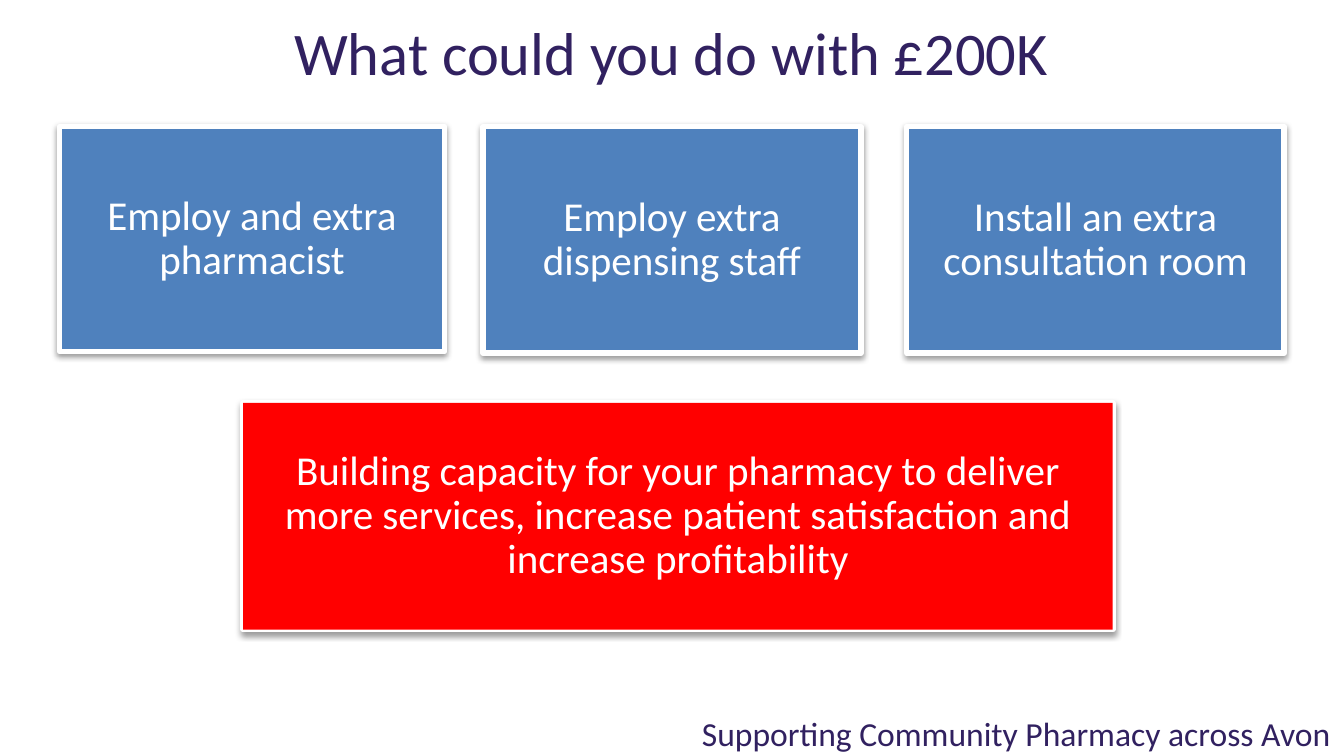
"""Build the slide on what a pharmacy could do with £200K."""
from lxml.etree import SubElement
from pptx import Presentation
from pptx.dml.color import RGBColor
from pptx.enum.shapes import MSO_SHAPE as Shape
from pptx.enum.text import MSO_ANCHOR as Anchor, PP_ALIGN as Align
from pptx.oxml.ns import qn
from pptx.util import Inches, Pt

NAVY, BLUE, RED, WHITE = "312160", "4F81BD", "FF0000", "FFFFFF"


def write(shape, text, size, color, alignment=Align.CENTER, spacing=1.0, inset=0.1):
    frame = shape.text_frame
    frame.text = text
    frame.word_wrap = True
    frame.vertical_anchor = Anchor.MIDDLE
    frame.margin_left = frame.margin_right = Inches(inset)
    frame.margin_top = frame.margin_bottom = Inches(inset if inset < 0.1 else 0.05)
    paragraph = frame.paragraphs[0]
    paragraph.alignment = alignment
    paragraph.line_spacing = spacing
    font = paragraph.runs[0].font
    font.name, font.size = "Calibri", Pt(size)
    font.color.rgb = RGBColor.from_string(color)


def add_panel(slide, box, fill, framed=True):
    shape = slide.shapes.add_shape(Shape.RECTANGLE, *box)
    shape.shadow.inherit = False
    shape.fill.solid()
    shape.fill.fore_color.rgb = RGBColor.from_string(fill)
    if not framed:
        shape.line.fill.background()
        return shape
    shape.line.color.rgb = RGBColor.from_string(WHITE)
    shape.line.width = Pt(3)
    effects = shape._element.spPr.find(qn("a:effectLst"))
    shadow = SubElement(effects, qn("a:outerShdw"), blurRad=str(Pt(3.1)), dist=str(Pt(1.6)),
                        dir="5400000", rotWithShape="0")
    color = SubElement(shadow, qn("a:srgbClr"), val="000000")
    SubElement(color, qn("a:alpha"), val="38000")
    return shape


presentation = Presentation()
presentation.slide_width = Inches(10)
presentation.slide_height = presentation.slide_width * 9 // 16
column, row = presentation.slide_width / 100, presentation.slide_height / 100
slide = presentation.slides.add_slide(presentation.slide_layouts[5])

title = slide.shapes.title
title.left, title.top = int(13.8 * column), int(0.9 * row)
title.width, title.height = int(72.3 * column), int(11.7 * row)
write(title, "What could you do with £200K", 32.4, NAVY)

footer = slide.shapes.add_textbox(int(27 * column), int(94.25 * row), int(73 * column), int(5.33 * row))
write(footer, "Supporting Community Pharmacy across Avon", 18, NAVY, Align.RIGHT)

cards = [
    (4.42, 28.65, 29.75, "Employ and extra pharmacist"),
    (35.95, 28.1, 30, "Employ extra dispensing staff"),
    (67.46, 28.1, 30, "Install an extra consultation room"),
]
for left, width, height, text in cards:
    box = [int(left * column), int(16.75 * row), int(width * column), int(height * row)]
    write(add_panel(slide, box, BLUE), text, 22, WHITE, spacing=0.9, inset=0.09)

box = [int(18.1 * column), int(53.3 * row), int(64.7 * column), int(30 * row)]
add_panel(slide, box, BLUE)
goal = add_panel(slide, box, RED, framed=False)
write(goal, "Building capacity for your pharmacy to deliver more services, "
      "increase patient satisfaction and increase profitability", 22, WHITE, spacing=0.9, inset=0.09)

presentation.save("out.pptx")
